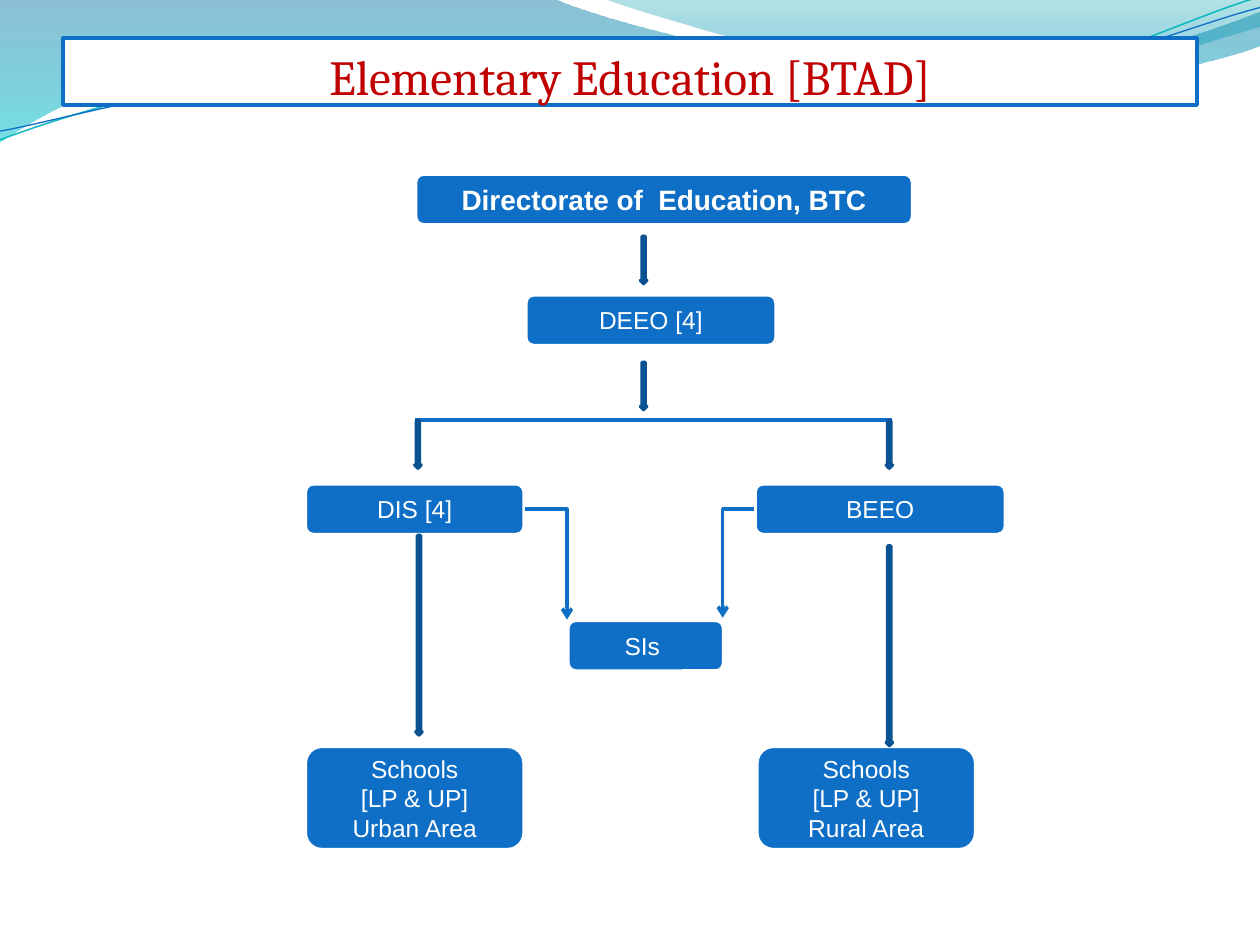
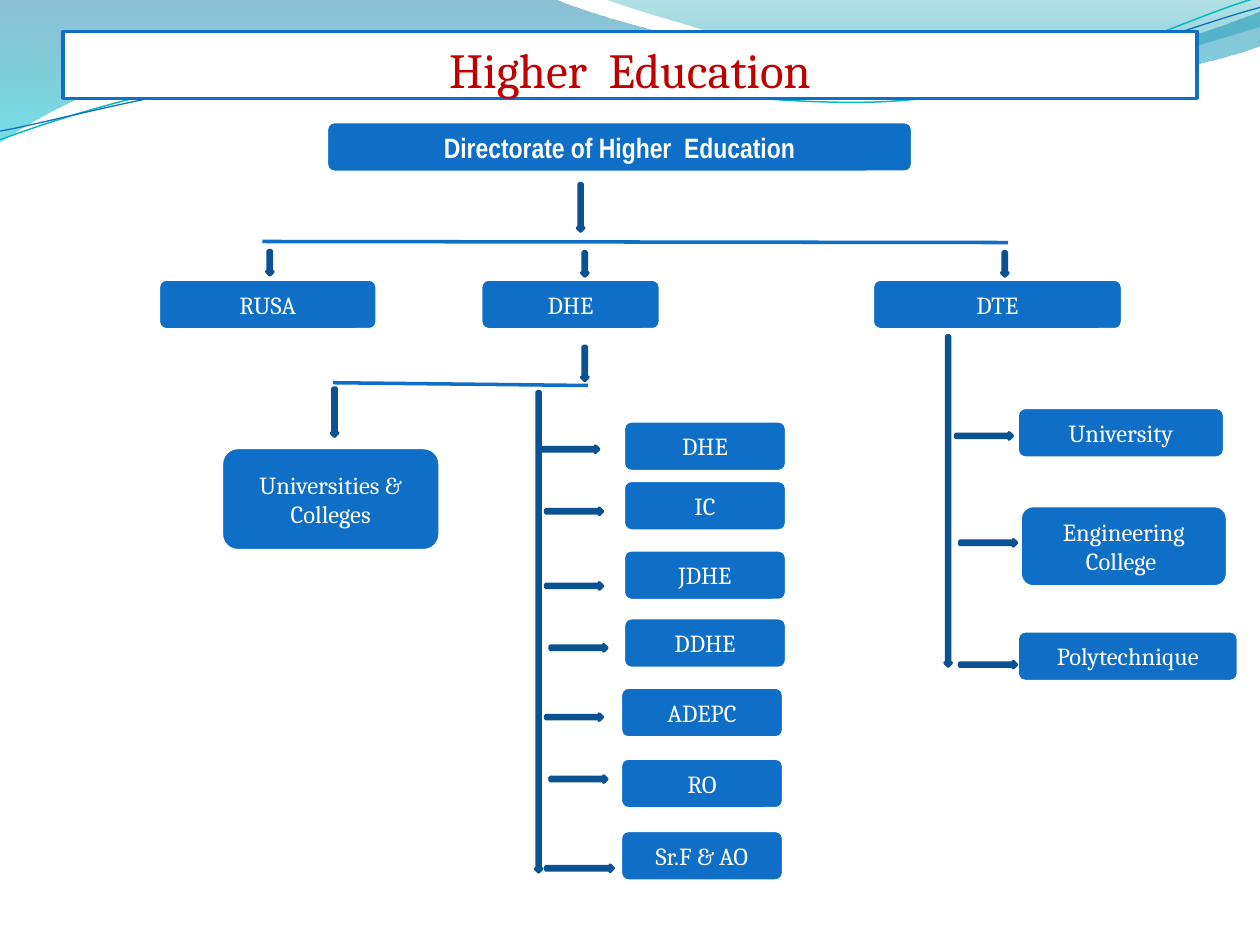
from lxml import etree
from pptx import Presentation
from pptx.dml.color import RGBColor
from pptx.enum.shapes import MSO_CONNECTOR, MSO_SHAPE
from pptx.enum.text import MSO_ANCHOR, MSO_AUTO_SIZE, PP_ALIGN
from pptx.oxml.ns import qn
from pptx.util import Pt

BLUE = RGBColor(0x0F, 0x6F, 0xC6)
DARK_BLUE = RGBColor(0x0B, 0x52, 0x92)
TEAL = RGBColor(0x0A, 0xB8, 0xBF)
RED = RGBColor(0xC0, 0x00, 0x00)
WHITE = RGBColor(0xFF, 0xFF, 0xFF)

BOX_H = 30
ARROW_W = 3.6

# Waves: start, then segments of one point (line) or three points (Bezier curve)
BANDS = [
    ([(0, 0),
      [(316.8, -0.7)],
      [(342.7, 12.2), (478.1, 45.4), (545.8, 45.4)],
      [(614.2, 45.4), (689.8, 18.7), (720, 6.5)],
      [(720.7, 25.9)],
      [(707.8, 31.7), (626.4, 54.7), (537.1, 54)],
      [(447.8, 54), (275, 20.2), (185, 24.5)],
      [(92.9, 25.9), (33.1, 59.8), (-0.7, 81.4)]],
     [(0, RGBColor(0x00, 0x74, 0xA1), 45), (1, RGBColor(0x00, 0xC6, 0xCF), 55)]),
    ([(344.9, -0.7),
      [(366.5, 7.9), (491, 44.6), (553.7, 46.8)],
      [(616.3, 49.7), (691.9, 23), (720, 15.1)],
      [(720, 0)]],
     [(0, RGBColor(0x00, 0xA1, 0xA9), 30), (0.8, RGBColor(0x00, 0x8B, 0xBF), 45)]),
]
WAVE_LINES = [
    ([(0, 79.9),
      [(34.6, 67), (113.8, 41), (199.4, 37.4)],
      [(284.4, 33.8), (427, 64.1), (513.4, 57.6)],
      [(599.8, 51.1), (675.4, 10.8), (718.6, -1.4)]], TEAL, 0.85),
    ([(0, 74.9),
      [(33.8, 69.1), (118.1, 43.9), (203.8, 40.3)],
      [(290.2, 36.7), (429.8, 60.5), (516.2, 54)],
      [(601.9, 48.2), (677.5, 15.1), (720, 4.3)]], BLUE, 0.75),
]

# Boxes: text, left, top, width, height. Arrows: left, top, length.
# Lines and elbows: from x, from y, to x, to y.
CHARTS = [
    {
        "title": "Elementary Education [BTAD]", "title_top": 21.8,
        "font": "Arial", "head_font": "Arial",
        "head": ("Directorate of  Education, BTC", 237, 99, 285, BOX_H),
        "boxes": [
            ("DEEO [4]", 300, 168, 144, BOX_H),
            ("DIS [4]", 174, 276, 126, BOX_H),
            ("BEEO", 431, 276, 144, BOX_H),
            ("SIs ", 324, 354, 90, BOX_H),
            ("Schools\n[LP & UP]\nUrban Area", 174, 426, 126, 60),
            ("Schools\n[LP & UP]\nRural Area", 432, 426, 126, 60),
        ],
        "lines": [(237, 240, 510, 240)],
        "elbows": [(300, 291, 324, 354), (431, 291, 413, 353)],
        "down": [(366, 135, 27), (366, 207, 27),
                 (237, 240.5, 27), (506.4, 240.5, 27),
                 (237.6, 306, 114), (506.4, 312, 114)],
        "right": [],
    },
    {
        "title": "Higher  Education", "title_top": 18,
        "font": "Cambria", "head_font": "Arial Narrow",
        "head": ("Directorate of Higher  Education", 186, 69, 336, BOX_H),
        "boxes": [
            ("RUSA", 90, 159, 126, BOX_H),
            ("DHE", 274.2, 159, 103.7, BOX_H),
            ("DTE", 498, 159, 144, BOX_H),
            ("Universities & Colleges", 126, 255.2, 126, 60),
            ("DHE", 355.7, 240, 94.3, BOX_H),
            ("IC", 355.7, 274, 94.3, BOX_H),
            ("JDHE", 355.7, 313.7, 94.3, BOX_H),
            ("DDHE", 355.7, 352.5, 94.3, BOX_H),
            ("ADEPC", 354, 392.2, 94.3, BOX_H),
            ("RO", 354, 432.7, 94.3, BOX_H),
            ("Sr.F & AO", 354, 474, 94.3, BOX_H),
            ("University", 580.8, 232.3, 119.5, BOX_H),
            ("Engineering\nCollege ", 582.5, 288.4, 119.5, 47.5),
            ("Polytechnique", 580.8, 360, 127.4, BOX_H),
        ],
        "lines": [(150, 138, 576, 138.6), (190.3, 218.7, 336, 220.3)],
        "elbows": [],
        "down": [(330, 105, 27), (152.4, 143.3, 13.7),
                 (332.4, 144, 13.7), (572.4, 144, 13.7),
                 (332.4, 198, 19.4), (189.4, 221.8, 27.4),
                 (306, 223.9, 274.3), (540, 192, 188.6)],
        "right": [(309.6, 254.9, 32.4), (311.8, 290.4, 32.4),
                  (311.8, 333, 32.4), (314.3, 368.4, 32.4),
                  (311.8, 408, 32.4), (314.3, 443.4, 32.4),
                  (311.8, 494.4, 38.6), (546, 247.3, 32.4),
                  (548.4, 308.4, 32.4), (548.4, 378, 32.4)],
    },
]


def add_wave(slide, wave, closed):
    """Draw a freeform whose three-point segments are Bezier curves."""
    start, *segments = wave
    points = [(Pt(x), Pt(y)) for segment in segments for x, y in segment]
    builder = slide.shapes.build_freeform(Pt(start[0]), Pt(start[1]))
    builder.add_line_segments(points, close=closed)
    sp = builder.convert_to_shape()
    sp.shadow.inherit = False
    steps = iter(list(sp.element.iter(qn("a:lnTo"))))
    for segment in segments:
        first, *rest = [next(steps) for _ in segment]
        if rest:
            first.tag = qn("a:cubicBezTo")
        for step in rest:
            first.append(step[0])
            step.getparent().remove(step)
    return sp


def add_line(slide, kind, ends):
    cn = slide.shapes.add_connector(kind, *map(Pt, ends))
    cn.line.color.rgb = BLUE
    cn.line.width = Pt(2)
    etree.SubElement(cn.element.spPr, qn("a:effectLst"))
    return cn


prs = Presentation()
prs.slide_width, prs.slide_height = Pt(720), Pt(540)
slides = [prs.slides.add_slide(prs.slide_layouts[5]) for _ in CHARTS]

# Shared background waves, moved to the slide master
waves = []
for wave, stops in BANDS:
    sp = add_wave(slides[0], wave, True)
    sp.line.fill.background()
    sp.fill.gradient()
    sp.fill.gradient_angle = 270
    for stop, (position, color, _) in zip(sp.fill.gradient_stops, stops):
        stop.position = position
        stop.color.rgb = color
    for clr, (_, _, opacity) in zip(sp.element.iter(qn("a:srgbClr")), stops):
        etree.SubElement(clr, qn("a:alpha")).set("val", str(opacity * 1000))
    waves.append(sp)
for wave, color, width in WAVE_LINES:
    sp = add_wave(slides[0], wave, False)
    sp.fill.background()
    sp.line.color.rgb = color
    sp.line.width = Pt(width)
    waves.append(sp)
for sp in waves:
    prs.slide_master.shapes.element.append(sp.element)

for s, chart in zip(slides, CHARTS):
    title = s.shapes.title
    title.left, title.top = Pt(36), Pt(chart["title_top"])
    title.width, title.height = Pt(648), Pt(38.2)
    title.fill.solid()
    title.fill.fore_color.rgb = WHITE
    title.line.color.rgb = BLUE
    title.line.width = Pt(2)
    tf = title.text_frame
    tf.text = chart["title"]
    tf.auto_size = MSO_AUTO_SIZE.NONE
    tf.vertical_anchor = MSO_ANCHOR.BOTTOM
    tf.margin_left = tf.margin_right = tf.margin_bottom = 0
    tf.margin_top = Pt(3.6)
    p = tf.paragraphs[0]
    p.alignment = PP_ALIGN.CENTER
    p.font.name, p.font.size = "Cambria", Pt(28)
    p.font.color.rgb = RED

    for i, (text, *place) in enumerate([chart["head"], *chart["boxes"]]):
        is_head = i == 0
        sp = s.shapes.add_shape(MSO_SHAPE.ROUNDED_RECTANGLE, *map(Pt, place))
        sp.shadow.inherit = False
        sp.fill.solid()
        sp.fill.fore_color.rgb = BLUE
        sp.line.color.rgb = WHITE
        sp.line.width = Pt(3)
        tf = sp.text_frame
        tf.text = text
        tf.vertical_anchor = MSO_ANCHOR.MIDDLE
        for p in tf.paragraphs:
            p.alignment = PP_ALIGN.CENTER
            p.font.name = chart["head_font"] if is_head else chart["font"]
            p.font.size = Pt(16 if is_head else 14)
            p.font.bold = is_head
            p.font.color.rgb = WHITE

    for ends in chart["lines"]:
        add_line(s, MSO_CONNECTOR.STRAIGHT, ends)
    for ends in chart["elbows"]:
        cn = add_line(s, MSO_CONNECTOR.ELBOW, ends)
        cn.element.spPr.find(qn("a:prstGeom")).set("prst", "bentConnector2")
        ln = cn.element.spPr.find(qn("a:ln"))
        etree.SubElement(ln, qn("a:tailEnd")).set("type", "arrow")

    arrows = [(MSO_SHAPE.DOWN_ARROW, x, y, ARROW_W, length)
              for x, y, length in chart["down"]]
    arrows += [(MSO_SHAPE.RIGHT_ARROW, x, y, length, ARROW_W)
               for x, y, length in chart["right"]]
    for kind, *place in arrows:
        sp = s.shapes.add_shape(kind, *map(Pt, place))
        sp.shadow.inherit = False
        sp.fill.solid()
        sp.fill.fore_color.rgb = BLUE
        sp.line.color.rgb = DARK_BLUE
        sp.line.width = Pt(2)

prs.save("out.pptx")
